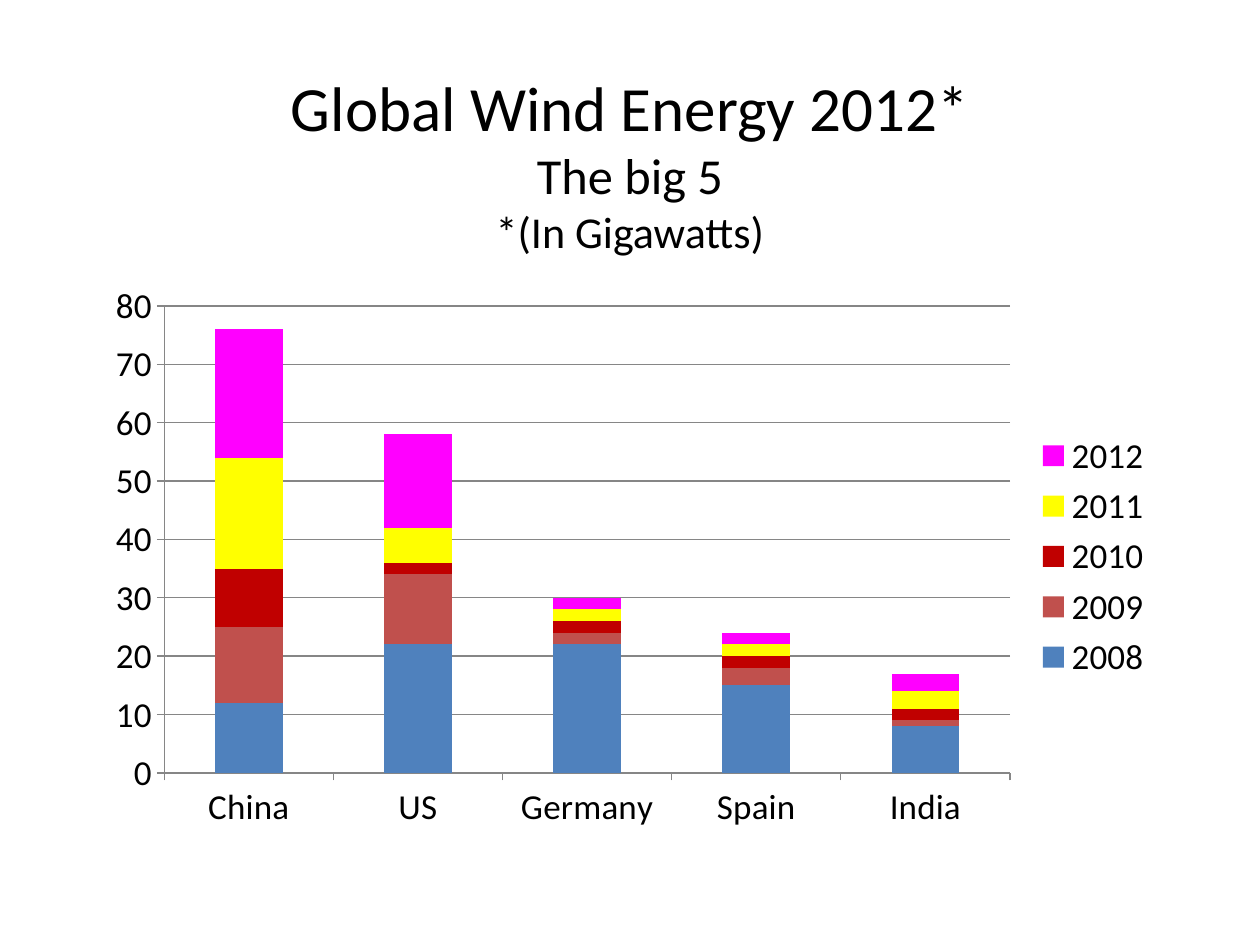
from copy import deepcopy

from pptx import Presentation
from pptx.chart.data import CategoryChartData
from pptx.dml.color import RGBColor
from pptx.enum.chart import XL_CHART_TYPE, XL_LEGEND_POSITION, XL_TICK_MARK
from pptx.enum.text import MSO_ANCHOR, MSO_AUTO_SIZE, PP_ALIGN
from pptx.util import Pt

STACKED = XL_CHART_TYPE.COLUMN_STACKED
RIGHT = XL_LEGEND_POSITION.RIGHT
OUTSIDE = XL_TICK_MARK.OUTSIDE
MIDDLE = MSO_ANCHOR.MIDDLE
NO_FIT = MSO_AUTO_SIZE.NONE
CENTER = PP_ALIGN.CENTER

FONT = "Calibri"
BLACK = "000000"
AXIS_GREY = "868686"
LEFT, WIDTH = 54, 612

TITLE_LINES = [
    ("Global Wind Energy 2012*", 36),
    ("The big 5", 28.8),
    ("*(In Gigawatts)", 25.2),
]
COUNTRIES = ["China", "US", "Germany", "Spain", "India"]
CAPACITY = [
    ("2008", "4F81BD", (12, 22, 22, 15, 8)),
    ("2009", "C0504D", (13, 12, 2, 3, 1)),
    ("2010", "C00000", (10, 2, 2, 2, 2)),
    ("2011", "FFFF00", (19, 6, 2, 2, 3)),
    ("2012", "FF00FF", (22, 16, 2, 2, 3)),
]


def rgb(hex_code):
    """Turn a hex string into a colour."""
    return RGBColor.from_string(hex_code)


def style_font(font, size):
    """Apply the slide's typeface and colour at the given size."""
    font.name = FONT
    font.size = Pt(size)
    font.color.rgb = rgb(BLACK)


def style_line(line):
    """Draw a thin grey chart line."""
    line.width = Pt(0.75)
    line.color.rgb = rgb(AXIS_GREY)


def fill_title(title):
    """Place the title and write its lines at falling sizes."""
    title.left, title.top = Pt(LEFT), Pt(48)
    title.width, title.height = Pt(WIDTH), Pt(90)
    frame = title.text_frame
    frame.auto_size = NO_FIT
    frame.vertical_anchor = MIDDLE
    paragraph = frame.paragraphs[0]
    paragraph.alignment = CENTER
    for index, (words, size) in enumerate(TITLE_LINES):
        run = paragraph.add_run()
        run.text = words
        style_font(run.font, size)
        if index < len(TITLE_LINES) - 1:
            paragraph.add_line_break()
            paragraph._p[-1].append(deepcopy(run._r.rPr))


def style_axes(chart):
    """Set the scale, ticks and grid of both axes."""
    for axis in (chart.category_axis, chart.value_axis):
        axis.major_tick_mark = OUTSIDE
        style_line(axis.format.line)
    scale = chart.value_axis
    scale.minimum_scale, scale.maximum_scale, scale.major_unit = 0, 80, 10
    scale.has_major_gridlines = True
    style_line(scale.major_gridlines.format.line)


def add_capacity_chart(slide):
    """Add the stacked columns of wind capacity by country and year."""
    data = CategoryChartData()
    data.categories = COUNTRIES
    for year, _, gigawatts in CAPACITY:
        data.add_series(year, gigawatts)
    chart = slide.shapes.add_chart(
        STACKED, Pt(LEFT), Pt(156), Pt(WIDTH), Pt(324), data
    ).chart
    style_font(chart.font, 20)
    chart.has_title = False
    chart.has_legend = True
    chart.legend.position = RIGHT
    chart.legend.include_in_layout = False
    style_axes(chart)
    columns = chart.plots[0]
    columns.gap_width, columns.overlap = 150, 100
    columns.vary_by_categories = False
    for series, (_, color, _) in zip(columns.series, CAPACITY):
        series.format.fill.solid()
        series.format.fill.fore_color.rgb = rgb(color)


def main():
    """Build the wind energy slide and save it."""
    deck = Presentation()
    deck.slide_width, deck.slide_height = Pt(720), Pt(540)
    slide = deck.slides.add_slide(deck.slide_layouts.get_by_name("Title Only"))
    fill_title(slide.shapes.title)
    add_capacity_chart(slide)
    deck.save("out.pptx")


if __name__ == "__main__":
    main()
